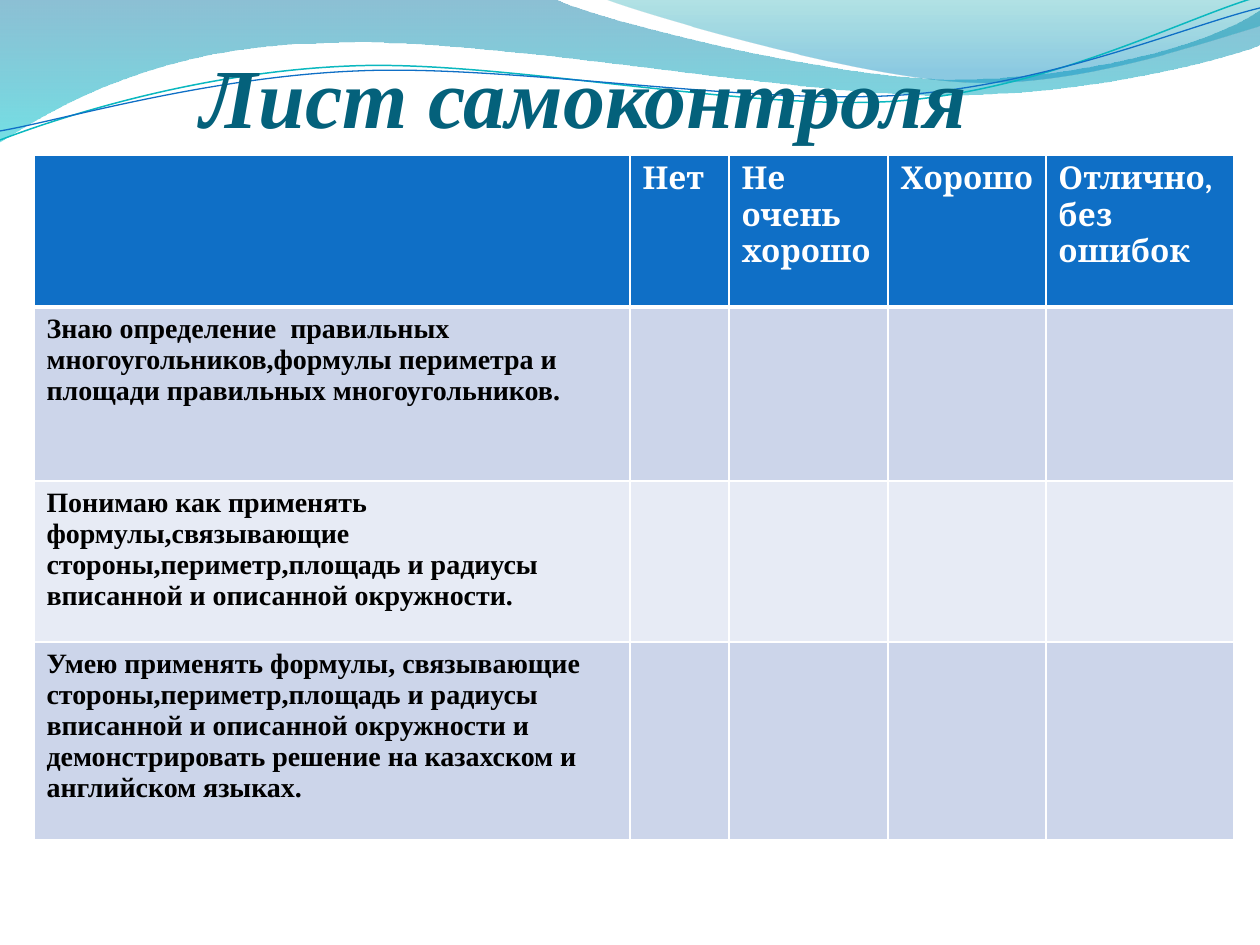
from lxml import etree
from pptx import Presentation, util as u
from pptx.dml.color import RGBColor
from pptx.enum import text
from pptx.oxml.ns import qn

PX = 914400 / 126
SERIF = "Times New Roman"
WHITE, BLUE = "FFFFFF", "0F6FC6"

TITLE = "Лист самоконтроля"
HEADERS = ["", "Нет", "Не  очень хорошо", "Хорошо", "Отлично,без ошибок"]
SKILLS = [
    "Знаю определение  правильных многоугольников,формулы периметра и площади "
    "правильных многоугольников.",
    "Понимаю как применять формулы,связывающие стороны,периметр,площадь и радиусы "
    "вписанной и описанной окружности.",
    "Умею применять формулы, связывающие стороны,периметр,площадь и радиусы "
    "вписанной и описанной окружности и демонстрировать решение на казахском и "
    "английском языках.",
]
COLUMNS = [596, 99, 159, 158, 188]
ROWS = [152, 174, 161, 198]
ROW_FILLS = [BLUE, "CCD5EA", "E7EBF5", "CCD5EA"]

# Each outline is a start point, then steps: one point is a line, three a cubic curve
BANDS = [
    ([(0, 0), [(554, -1)],
      [(600, 21), (837, 79), (955, 79)], [(1074, 79), (1207, 47), (1260, 11)],
      [(1261, 45)],
      [(1237, 55), (1096, 96), (940, 95)], [(784, 95), (481, 35), (324, 43)],
      [(163, 45), (58, 105), (-1, 142)]],
     [(0, "0074A1", 45), (100, "00C6CF", 55)]),
    ([(604, -1),
      [(641, 14), (859, 78), (969, 82)], [(1079, 87), (1211, 40), (1260, 26)],
      [(1260, 0)]],
     [(0, "00A1A9", 30), (80, "008BBF", 45)]),
]
STRANDS = [
    ([(0, 140), [(60, 117), (199, 72), (349, 66)],
      [(498, 59), (747, 112), (898, 101)], [(1050, 89), (1182, 19), (1257, -3)]],
     "0AB8BF", 0.85),
    ([(0, 131), [(59, 121), (207, 77), (357, 71)],
      [(508, 64), (752, 106), (903, 95)], [(1053, 84), (1186, 26), (1260, 8)]],
     BLUE, 0.75),
]


def px(value):
    return round(value * PX)


def rgb(code):
    return RGBColor.from_string(code)


def add_outline(page, outline, close):
    start, *segments = outline
    builder = page.shapes.build_freeform(px(start[0]), px(start[1]))
    builder.add_line_segments([(px(x), px(y)) for segment in segments for x, y in segment],
                              close=close)
    shape = builder.convert_to_shape()
    shape.shadow.inherit = False
    # Merge each group of three steps into one cubic curve
    steps = iter(shape._element.xpath(".//a:path/a:lnTo"))
    for segment in segments:
        first, *others = [next(steps) for _ in segment]
        if others:
            first.tag = qn("a:cubicBezTo")
        for step in others:
            first.append(step[0])
            step.getparent().remove(step)
    return shape


def add_band(page, outline, stops):
    shape = add_outline(page, outline, True)
    shape.line.fill.background()
    shape.fill.gradient()
    shape.fill.gradient_angle = 270
    for stop, (position, colour, _) in zip(shape.fill.gradient_stops, stops):
        stop.position = position / 100
        stop.color.rgb = rgb(colour)
    colours = shape._element.xpath(".//a:gs/a:srgbClr")
    for element, (_, _, opacity) in zip(colours, stops):
        etree.SubElement(element, qn("a:alpha"), val=str(opacity * 1000))


def add_strand(page, outline, colour, width):
    shape = add_outline(page, outline, False)
    shape.fill.background()
    shape.line.color.rgb = rgb(colour)
    shape.line.width = u.Pt(width)


def add_run(para, words, font, size, colour, italic=False):
    span = para.add_run()
    span.text = words
    span.font.name, span.font.size = font, u.Pt(size)
    span.font.bold, span.font.italic = True, italic
    span.font.color.rgb = rgb(colour)


def set_borders(cell, widths):
    properties = cell._tc.get_or_add_tcPr()
    for side, width in widths.items():
        line = etree.SubElement(properties, qn("a:ln" + side), w=str(u.Pt(width)))
        fill = etree.SubElement(line, qn("a:solidFill"))
        etree.SubElement(fill, qn("a:srgbClr"), val=WHITE)


def add_title(page):
    box = page.shapes.add_textbox(px(74), px(26), px(1134), px(119))
    frame = box.text_frame
    frame.word_wrap = True
    frame.vertical_anchor = text.MSO_ANCHOR.BOTTOM
    frame.margin_left, frame.margin_right, frame.margin_bottom = px(127), 0, 0
    add_run(frame.paragraphs[0], TITLE, SERIF, 48, "04617B", italic=True)


def add_checklist(page):
    table = page.shapes.add_table(len(ROWS), len(COLUMNS), px(34), px(155),
                                  px(sum(COLUMNS)), px(sum(ROWS))).table
    for column, width in zip(table.columns, COLUMNS):
        column.width = px(width)
    for row, height in zip(table.rows, ROWS):
        row.height = px(height)
    content = [HEADERS] + [[skill] + [""] * (len(COLUMNS) - 1) for skill in SKILLS]
    for r, words_in_row in enumerate(content):
        style = ("Cambria", 18, WHITE) if r == 0 else (SERIF, 16, "000000")
        for c, words in enumerate(words_in_row):
            cell = table.cell(r, c)
            set_borders(cell, {"L": 1, "R": 1, "T": 3 if r == 1 else 1,
                               "B": 3 if r == 0 else 1})
            cell.fill.solid()
            cell.fill.fore_color.rgb = rgb(ROW_FILLS[r])
            if words:
                add_run(cell.text_frame.paragraphs[0], words, *style)


def main():
    deck = Presentation()
    deck.slide_width, deck.slide_height = px(1260), px(945)
    page = deck.slides.add_slide(deck.slide_layouts[6])
    # Wave decoration along the top
    for band in BANDS:
        add_band(page, *band)
    for strand in STRANDS:
        add_strand(page, *strand)
    # Heading and self-assessment grid
    add_title(page)
    add_checklist(page)
    deck.save("out.pptx")


if __name__ == "__main__":
    main()
